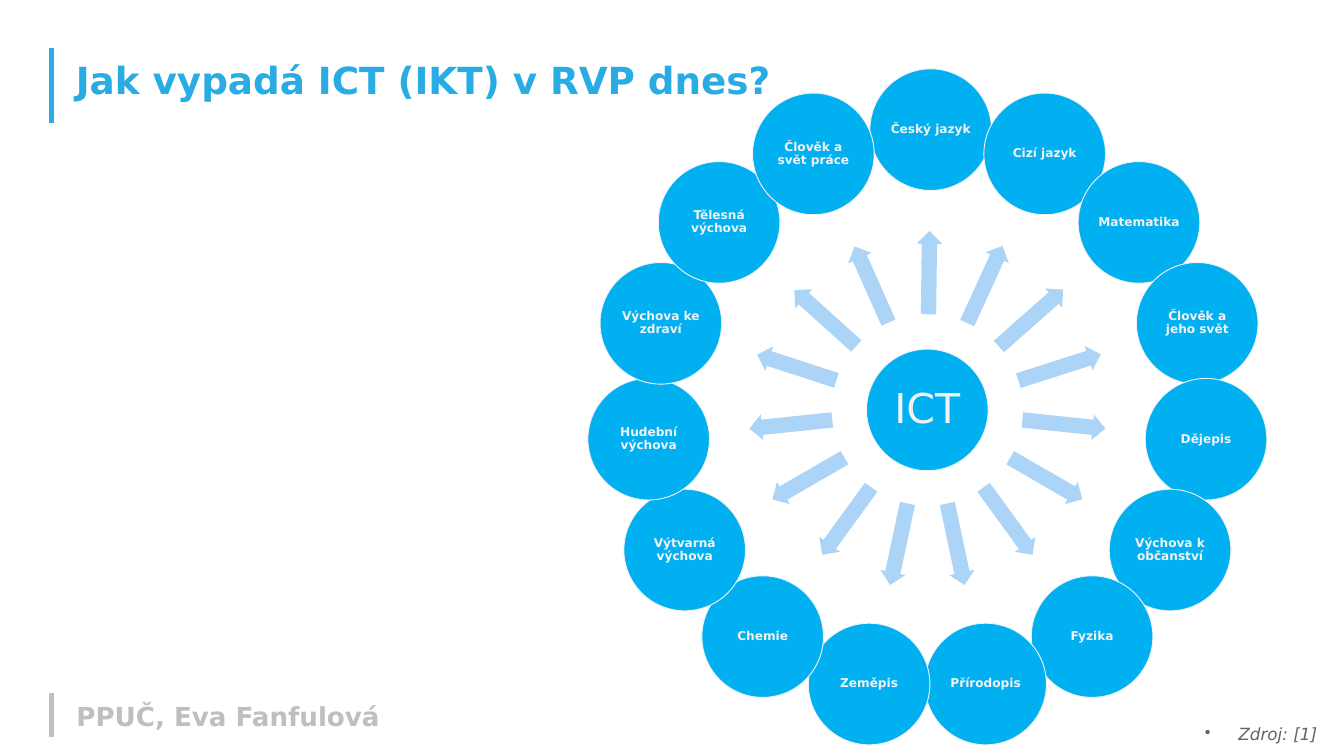
from math import atan2, cos, degrees, hypot, radians, sin

from lxml import etree
from pptx import Presentation
from pptx.dml.color import RGBColor
from pptx.enum.shapes import MSO_CONNECTOR, MSO_SHAPE
from pptx.enum.text import MSO_ANCHOR, PP_ALIGN
from pptx.oxml.ns import qn
from pptx.util import Inches, Pt

OVAL, ARROW = MSO_SHAPE.OVAL, MSO_SHAPE.RIGHT_ARROW
LINE = MSO_CONNECTOR.STRAIGHT
MIDDLE, TOP = MSO_ANCHOR.MIDDLE, MSO_ANCHOR.TOP
CENTER, LEFT = PP_ALIGN.CENTER, PP_ALIGN.LEFT

WIDE, HIGH = 20, 11.25
FONT = "DejaVu Sans"
SKY, BLUE, PALE = "29ABE3", "00B0F0", "ABD4F6"
GREY, DARK, SNOW = "BFBFBF", "63636E", "F2F2F5"

HUB = "ICT"
TOPICS = [
    "Český jazyk", "Cizí jazyk", "Matematika", "Člověk a jeho svět",
    "Dějepis", "Výchova k občanství", "Fyzika", "Přírodopis",
    "Zeměpis", "Chemie", "Výtvarná výchova", "Hudební výchova",
    "Výchova ke zdraví", "Tělesná výchova", "Člověk a svět práce",
]
BARS = [(0.71, 1.83, SKY), (10.31, 10.96, GREY)]
BAR_X = 0.77
LABELS = [
    ("PPUČ, Eva Fanfulová", (1.04, 10.43, 18.04, 0.53),
     {"size": Pt(28), "bold": True}, GREY, False),
    ("Jak vypadá ICT (IKT) v RVP dnes?", (1.03, 0.88, 18.05, 0.71),
     {"size": Pt(40), "bold": True}, SKY, False),
    ("Zdroj: [1]", (17.83, 10.76, 2.08, 0.42),
     {"size": Pt(18), "italic": True}, DARK, True),
]
MID_X, MID_Y = 13.8, 6.1
RING, DISC = 4.17, 1.81
GAP, THICK = 2.93, 0.38
NUDGE, NUDGED = 0.05, 4


def color(code):
    return RGBColor.from_string(code)


def write(shape, text, font, tint, align, anchor, inset=None):
    frame = shape.text_frame
    frame.word_wrap = True
    frame.vertical_anchor = anchor
    if inset is not None:
        for side in ("left", "right", "top", "bottom"):
            setattr(frame, "margin_" + side, Inches(inset))
    para = frame.paragraphs[0]
    para.alignment, para.line_spacing = align, 0.9
    run = para.add_run()
    run.text = text
    for key, value in {"name": FONT, **font}.items():
        setattr(run.font, key, value)
    run.font.color.rgb = color(tint)
    return para


def bullet(para):
    para.space_before = Pt(12)
    props = para._p.get_or_add_pPr()
    props.set("marL", str(Inches(0.5)))
    props.set("indent", str(-Inches(0.5)))
    etree.SubElement(props, qn("a:buChar")).set("char", "•")


def place(slide, kind, x, y, wide, high, fill):
    box = (x - wide / 2, y - high / 2, wide, high)
    shape = slide.shapes.add_shape(kind, *map(Inches, box))
    shape.shadow.inherit = False
    shape.fill.solid()
    shape.fill.fore_color.rgb = color(fill)
    return shape


def disc(slide, x, y, text, font, inset):
    shape = place(slide, OVAL, x, y, DISC, DISC, BLUE)
    shape.line.color.rgb = color(SNOW)
    shape.line.width = Pt(1)
    write(shape, text, font, SNOW, CENTER, MIDDLE, inset)


def main():
    deck = Presentation()
    deck.slide_width, deck.slide_height = Inches(WIDE), Inches(HIGH)
    slide = deck.slides.add_slide(deck.slide_layouts[6])

    for top, end, tint in BARS:
        ends = map(Inches, (BAR_X, top, BAR_X, end))
        bar = slide.shapes.add_connector(LINE, *ends)
        bar.line.color.rgb = color(tint)
        bar.line.width = Pt(5)
        etree.SubElement(bar._element.spPr, qn("a:effectLst"))

    for text, box, font, tint, dotted in LABELS:
        label = slide.shapes.add_textbox(*map(Inches, box))
        para = write(label, text, font, tint, LEFT, TOP)
        if dotted:
            bullet(para)

    disc(slide, MID_X, MID_Y, HUB, {"size": Pt(44)}, 0.06)
    for i, topic in enumerate(TOPICS):
        turn = radians(360 * i / len(TOPICS) - 90)
        dx = RING * cos(turn) + (NUDGE if i < NUDGED else 0)
        dy = RING * sin(turn)
        size = hypot(dx, dy) - GAP
        arrow = place(slide, ARROW, MID_X + dx * 0.49, MID_Y + dy * 0.49,
                      size, THICK, PALE)
        arrow.adjustments[0], arrow.adjustments[1] = 0.6, 0.5
        arrow.rotation = degrees(atan2(dy, dx)) % 360
        arrow.line.fill.background()
        disc(slide, MID_X + dx, MID_Y + dy, topic,
             {"size": Pt(13), "bold": True}, 0.02)

    deck.save("out.pptx")


if __name__ == "__main__":
    main()
